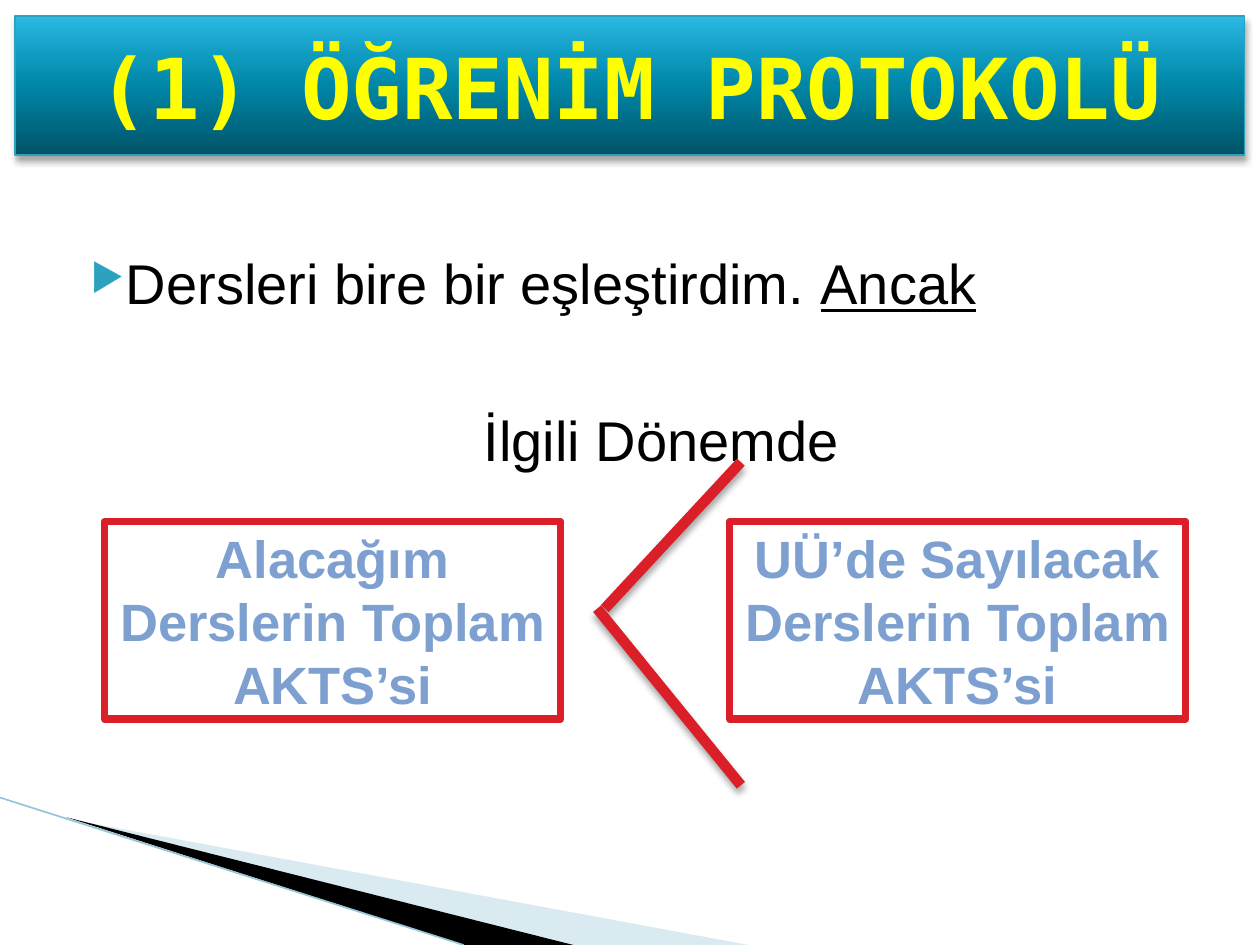
from copy import deepcopy
from dataclasses import dataclass

from lxml.etree import SubElement
from pptx import Presentation
from pptx.dml.color import RGBColor
from pptx.enum.shapes import MSO_CONNECTOR, MSO_SHAPE
from pptx.enum.text import MSO_ANCHOR, MSO_AUTO_SIZE, PP_ALIGN
from pptx.oxml.ns import qn
from pptx.util import Inches, Pt

WIDE, HIGH = Inches(10), Inches(7.5)


@dataclass(frozen=True)
class Theme:
    """Hold the colours, fonts and type sizes of the slide."""
    sans: str = "Arial"
    mono: str = "DejaVu Sans Mono"
    head: int = 48
    body: int = 32
    label: int = 30
    ink: str = "000000"
    paper: str = "FFFFFF"
    yellow: str = "FFFF00"
    red: str = "DA1F28"
    blue: str = "7DA0D0"
    teal: str = "2DA2BF"
    pale: str = "A0CBDC"
    edge: str = "97C5D8"
    fade: tuple = ((0, "005367"), (0.5, "0086A7"), (0.7, "0E9ABE"), (1, "2CB9E3"))


LOOK = Theme()


def rgb(code):
    """Turn a hex code into a colour."""
    return RGBColor.from_string(code)


def spot(x, y):
    """Turn percentages of the slide into a point."""
    return round(WIDE * x / 100), round(HIGH * y / 100)


def child(node, tag, **attrs):
    """Add a drawing element with its attributes."""
    return SubElement(node, qn(tag), {key: str(val) for key, val in attrs.items()})


def place(shape, x, y, wide, high):
    """Move and size a shape by percentages of the slide."""
    shape.left, shape.top = spot(x, y)
    shape.width, shape.height = spot(wide, high)


def style(para, face, size, code, bold=False):
    """Format the runs of a paragraph."""
    for run in para.runs:
        font = run.font
        font.name, font.size, font.bold = face, Pt(size), bold
        font.color.rgb = rgb(code)


def stroke(line, code, width):
    """Set the colour and width of a line."""
    line.color.rgb = rgb(code)
    line.width = Pt(width)


def shade(shape):
    """Drop a soft shadow below a shape."""
    list_ = child(shape._element.spPr, "a:effectLst")
    drop = child(list_, "a:outerShdw", blurRad=Pt(4), dist=Pt(3), dir=5400000, rotWithShape=0)
    child(child(drop, "a:srgbClr", val=LOOK.ink), "a:alpha", val=35000)


def blend(fill, shape):
    """Fill a shape with the theme's upward fade."""
    fill.gradient()
    fill.gradient_angle = 90
    stops = shape._element.spPr.find(".//" + qn("a:gsLst"))
    while len(stops) < len(LOOK.fade):
        stops.append(deepcopy(stops[0]))
    for stop, (share, code) in zip(fill.gradient_stops, LOOK.fade):
        stop.position = share
        stop.color.rgb = rgb(code)


def wedge(slide, points, code, alpha=100):
    """Draw a filled corner wedge."""
    first, *rest = [spot(*point) for point in points]
    pen = slide.shapes.build_freeform(*first)
    pen.add_line_segments(rest, close=True)
    shape = pen.convert_to_shape()
    shape.shadow.inherit = False
    shape.fill.solid()
    shape.fill.fore_color.rgb = rgb(code)
    shape.line.fill.background()
    if alpha < 100:
        tint = shape._element.spPr.find(".//" + qn("a:srgbClr"))
        child(tint, "a:alpha", val=alpha * 1000)


def rule(slide, start, end, code, width, cast=False):
    """Draw a straight line, with or without a shadow."""
    line = slide.shapes.add_connector(MSO_CONNECTOR.STRAIGHT, *spot(*start), *spot(*end))
    stroke(line.line, code, width)
    if cast:
        shade(line)
    else:
        child(line._element.spPr, "a:effectLst")


def banner(slide, text):
    """Turn the title into a shaded banner."""
    title = slide.shapes.title
    place(title, 1.2, 1.7, 97.6, 14.7)
    blend(title.fill, title)
    stroke(title.line, LOOK.teal, 0.75)
    shade(title)
    frame = title.text_frame
    frame.text = text
    frame.auto_size = MSO_AUTO_SIZE.NONE
    frame.vertical_anchor = MSO_ANCHOR.MIDDLE
    para = frame.paragraphs[0]
    para.alignment = PP_ALIGN.CENTER
    style(para, LOOK.mono, LOOK.head, LOOK.yellow, True)


def bullet(para):
    """Give a paragraph a hanging arrow bullet."""
    props = para._p.get_or_add_pPr()
    props.set("marL", str(Inches(0.4)))
    props.set("indent", str(Inches(-0.28)))
    child(child(props, "a:buClr"), "a:srgbClr", val=LOOK.teal)
    child(props, "a:buSzPct", val=68000)
    child(props, "a:buChar", char="▶")


def story(slide, lead, stress, note):
    """Write the bulleted sentence and the centred note."""
    box = slide.shapes.add_textbox(0, 0, 0, 0)
    place(box, 5, 22.1, 93.8, 71)
    frame = box.text_frame
    frame.word_wrap = True
    first, last = frame.paragraphs[0], frame.add_paragraph()
    bullet(first)
    first.text = lead
    first.add_run().text = stress
    last.text = note
    last.alignment = PP_ALIGN.CENTER
    last._p.get_or_add_pPr().set("marL", str(Inches(0.12)))
    for para in (first, last):
        para.line_spacing = 1.5
        style(para, LOOK.sans, LOOK.body, LOOK.ink)
    last.space_before = Pt(32)
    first.runs[-1].font.underline = True


def card(slide, x, text):
    """Draw a red framed label."""
    shape = slide.shapes.add_shape(MSO_SHAPE.RECTANGLE, 0, 0, 0, 0)
    place(shape, x, 55.2, 36.2, 20.9)
    shape.shadow.inherit = False
    shape.fill.solid()
    shape.fill.fore_color.rgb = rgb(LOOK.paper)
    stroke(shape.line, LOOK.red, 4.33)
    frame = shape.text_frame
    frame.text = text
    frame.word_wrap = True
    frame.vertical_anchor = MSO_ANCHOR.MIDDLE
    para = frame.paragraphs[0]
    para.alignment = PP_ALIGN.CENTER
    style(para, LOOK.sans, LOOK.label, LOOK.blue, True)


def main():
    """Build the slide and save it."""
    deck = Presentation()
    deck.slide_width, deck.slide_height = WIDE, HIGH
    slide = deck.slides.add_slide(deck.slide_layouts[5])
    wedge(slide, ((5.5, 86.7), (59.4, 100), (45.6, 100)), LOOK.pale, 40)
    wedge(slide, ((5.3, 86.5), (45.5, 100), (36.8, 100)), LOOK.ink)
    rule(slide, (0, 84.4), (36.8, 100), LOOK.edge, 0.95)
    story(slide, "Dersleri bire bir eşleştirdim. ", "Ancak", "İlgili Dönemde")
    banner(slide, "(1) ÖĞRENİM PROTOKOLÜ")
    card(slide, 8.3, "Alacağım Derslerin Toplam AKTS’si")
    card(slide, 57.9, "UÜ’de Sayılacak Derslerin Toplam AKTS’si")
    rule(slide, (58.8, 48.9), (48, 64.4), LOOK.red, 6, True)
    rule(slide, (47.4, 64.4), (58.8, 83.1), LOOK.red, 6, True)
    deck.save("out.pptx")


if __name__ == "__main__":
    main()
